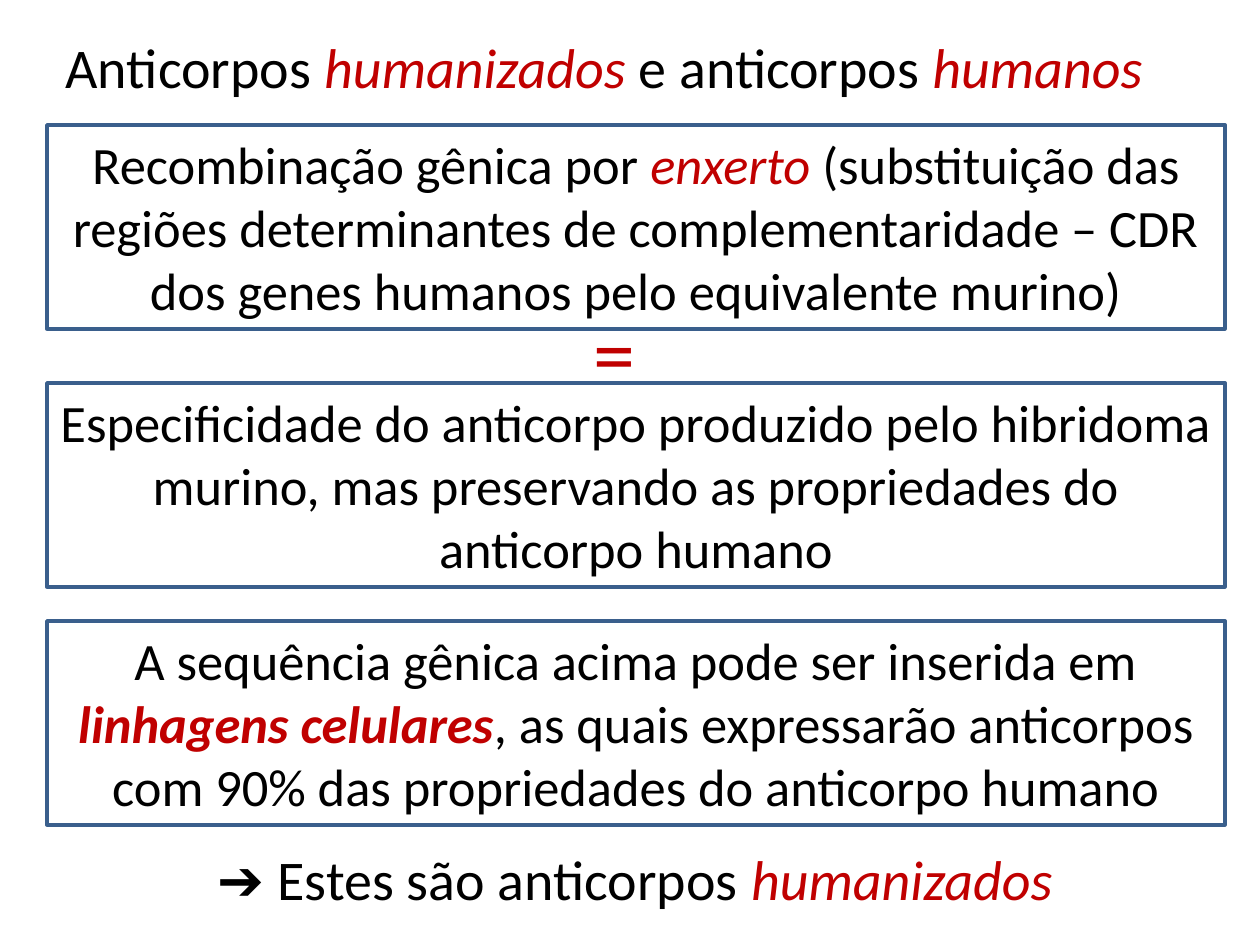
from pptx import Presentation
from pptx.dml.color import RGBColor
from pptx.enum.shapes import MSO_SHAPE
from pptx.enum.text import MSO_ANCHOR, PP_ALIGN
from pptx.util import Pt

PX = 914400 // 126
RECTANGLE = MSO_SHAPE.RECTANGLE
LEFT, CENTER = PP_ALIGN.LEFT, PP_ALIGN.CENTER
TOP, MIDDLE = MSO_ANCHOR.TOP, MSO_ANCHOR.MIDDLE
BLACK, RED, BLUE = "000000", "C00000", "3A5F8C"
FONT = "Calibri"

# Each text is a list of (wording, style); style "i" is red italic, "bi" also bold
TITLE = [("Anticorpos ", ""), ("humanizados", "i"),
         (" e anticorpos ", ""), ("humanos", "i")]
GRAFTING = [("Recombinação gênica por ", ""), ("enxerto", "i"),
            (" (substituição das regiões determinantes de complementaridade"
             " – CDR dos genes humanos pelo equivalente murino)", "")]
SPECIFICITY = [("Especificidade do anticorpo produzido pelo hibridoma murino, "
                "mas preservando as propriedades do anticorpo humano", "")]
CELL_LINES = [("A sequência gênica acima pode ser inserida em ", ""),
              ("linhagens celulares", "bi"),
              (", as quais expressarão anticorpos com 90% das propriedades "
               "do anticorpo humano", "")]
CONCLUSION = [("➔ Estes são anticorpos ", ""), ("humanizados", "i")]


def rgb(value):
    return RGBColor.from_string(value)


def emu(box):
    return [length * PX for length in box]


def write(shape, parts, size, align=CENTER, anchor=TOP, color=BLACK):
    frame = shape.text_frame
    frame.word_wrap = True
    frame.vertical_anchor = anchor
    paragraph = frame.paragraphs[0]
    paragraph.alignment = align
    paragraph.font.name = FONT
    paragraph.font.size = Pt(size)
    for wording, style in parts:
        run = paragraph.add_run()
        run.text = wording
        run.font.color.rgb = rgb(RED if style else color)
        if style:
            run.font.italic = True
            run.font.bold = "b" in style


def add_title(slide, box):
    title = slide.shapes.title
    title.left, title.top, title.width, title.height = emu(box)
    write(title, TITLE, 32, align=LEFT)


def add_statement(slide, box, parts):
    statement = slide.shapes.add_shape(RECTANGLE, *emu(box))
    statement.shadow.inherit = False
    statement.fill.background()
    statement.line.color.rgb = rgb(BLUE)
    statement.line.width = Pt(2)
    write(statement, parts, 30, anchor=MIDDLE)


def add_label(slide, box, parts, size, **options):
    label = slide.shapes.add_textbox(*emu(box))
    write(label, parts, size, **options)


def main():
    presentation = Presentation()
    presentation.slide_width, presentation.slide_height = emu((1260, 945))
    slide = presentation.slides.add_slide(presentation.slide_layouts[5])

    add_title(slide, (53, 26, 1134, 93))

    # Framed statements, from the grafting to the cell lines
    for top, parts in ((125, GRAFTING), (383, SPECIFICITY), (621, CELL_LINES)):
        add_statement(slide, (47, top, 1178, 204), parts)

    # Equals sign between the first two statements
    add_label(slide, (581, 294, 79, 115), [("=", "")], 48,
              align=LEFT, color=RED)

    # Conclusion
    add_label(slide, (47, 838, 1177, 81), CONCLUSION, 32)

    presentation.save("out.pptx")


if __name__ == "__main__":
    main()
